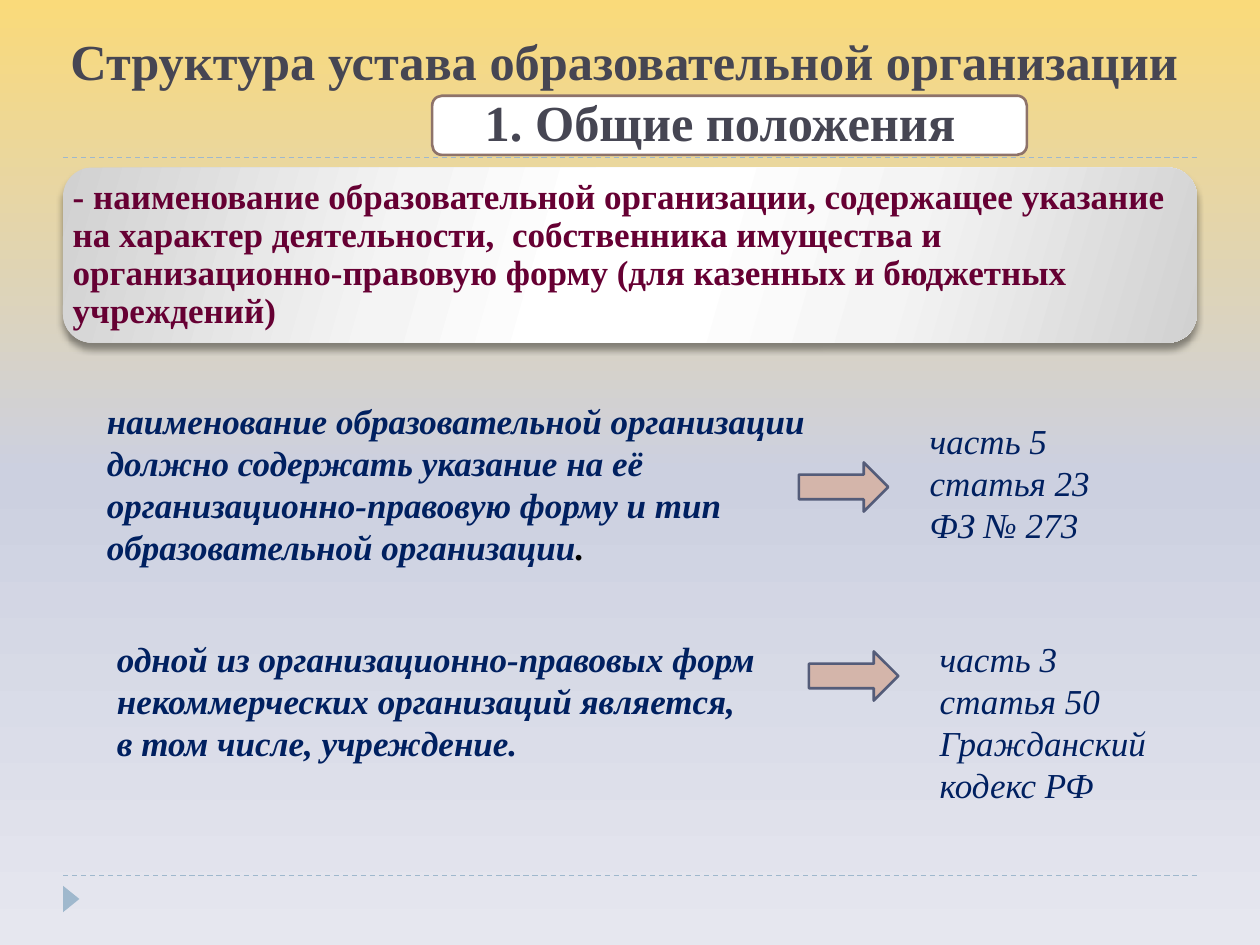
from dataclasses import dataclass

from lxml import etree
from pptx import Presentation
from pptx.dml.color import RGBColor
from pptx.enum.dml import MSO_LINE
from pptx.enum.shapes import MSO_CONNECTOR, MSO_SHAPE
from pptx.enum.text import MSO_ANCHOR, MSO_AUTO_SIZE, PP_ALIGN
from pptx.oxml.ns import qn
from pptx.util import Inches, Pt

DASH = MSO_LINE.DASH
STRAIGHT = MSO_CONNECTOR.STRAIGHT
ROUNDED = MSO_SHAPE.ROUNDED_RECTANGLE
ARROW = MSO_SHAPE.RIGHT_ARROW
TRIANGLE = MSO_SHAPE.ISOSCELES_TRIANGLE
MIDDLE, BOTTOM = MSO_ANCHOR.MIDDLE, MSO_ANCHOR.BOTTOM
LEFT, CENTER = PP_ALIGN.LEFT, PP_ALIGN.CENTER
NO_FIT = MSO_AUTO_SIZE.NONE
TITLE_ONLY = 5

WIDTH, HEIGHT = Inches(10), Inches(7.5)
COLS, ROWS = 100, 75
LEFT_COL, RIGHT_COL = 5, 95
STATEMENT_COL, ARROW_COL, REFERENCE_COL = 7.5, 63.4, 72.8


@dataclass(frozen=True)
class Theme:
    font: str = "Times New Roman"
    title_size: float = 28.8
    body_size: float = 20
    title: str = "464653"
    banner: str = "660033"
    body: str = "002060"
    black: str = "000000"
    white: str = "FFFFFF"
    rule: str = "9FB8CD"
    frame: str = "8E736A"
    arrow: str = "D4B5AA"
    arrow_line: str = "545C79"
    background: tuple = ((0, "FADA7A"), (50, "CCD0E0"), (100, "E6E7EF"))
    silver: tuple = ((0, "D1D1D1"), (30, "F4F4F4"), (45, "FFFFFF"),
                     (55, "FFFFFF"), (73, "F4F4F4"), (100, "D1D1D1"))


THEME = Theme()


def col(n):
    return round(WIDTH * n / COLS)


def row(n):
    return round(HEIGHT * n / ROWS)


def box(x, y, w, h):
    return col(x), row(y), col(w), row(h)


def child(parent, tag, **attrs):
    return etree.SubElement(parent, qn(tag), {k: str(v) for k, v in attrs.items()})


def set_gradient(fill, stops, angle):
    fill.gradient()
    fill.gradient_angle = -angle % 360
    stop_list = fill.gradient_stops[0]._gs.getparent()
    for gs in list(stop_list):
        stop_list.remove(gs)
    for position, color in stops:
        gs = child(stop_list, "a:gs", pos=position * 1000)
        child(gs, "a:srgbClr", val=color)


def add_shadow(sp, color, alpha, blur, distance):
    effects = sp._element.spPr.find(qn("a:effectLst"))
    shadow = child(effects, "a:outerShdw", blurRad=Pt(blur), dist=Pt(distance),
                   dir=90 * 60000, rotWithShape=0)
    child(child(shadow, "a:srgbClr", val=color), "a:alpha", val=alpha * 1000)


def add_text(p, text, size=THEME.body_size, color=THEME.body, bold=False,
             italic=False, align=LEFT):
    p.alignment = align
    r = p.add_run()
    r.text = text
    r.font.name = THEME.font
    r.font.size = Pt(size)
    r.font.bold = bold
    r.font.italic = italic
    r.font.color.rgb = RGBColor.from_string(color)


def next_paragraph(tf, index):
    return tf.add_paragraph() if index else tf.paragraphs[0]


def add_box(slide, kind, at, fill=None, line=None):
    sp = slide.shapes.add_shape(kind, *box(*at))
    sp.shadow.inherit = False
    if fill:
        sp.fill.solid()
        sp.fill.fore_color.rgb = RGBColor.from_string(fill)
    if line:
        sp.line.color.rgb = RGBColor.from_string(line)
        sp.line.width = Pt(1.5)
    else:
        sp.line.fill.background()
    return sp


def add_rule(slide, y):
    line = slide.shapes.add_connector(STRAIGHT, col(LEFT_COL), row(y), col(RIGHT_COL), row(y))
    line.line.color.rgb = RGBColor.from_string(THEME.rule)
    line.line.width = Pt(0.75)
    line.line.dash_style = DASH
    child(line._element.spPr, "a:effectLst")


def add_note(slide, at, paragraphs, **style):
    tf = slide.shapes.add_textbox(*box(*at)).text_frame
    tf.word_wrap = True
    for i, text in enumerate(paragraphs):
        add_text(next_paragraph(tf, i), text, italic=True, **style)
    return tf


def set_title(slide, heading, section):
    title = slide.shapes.title
    title.left, title.top, title.width, title.height = box(3.5, 1.7, 92.1, 10.8)
    tf = title.text_frame
    tf.word_wrap = True
    tf.auto_size = NO_FIT
    tf.vertical_anchor = BOTTOM
    for i, (text, indent) in enumerate(((heading, 0), (section, 15.2))):
        p = next_paragraph(tf, i)
        add_text(p, text, size=THEME.title_size, color=THEME.title, bold=True, align=CENTER)
        p.space_before = Pt(0)
        p._p.get_or_add_pPr().set("marL", str(col(indent)))
    slide.shapes._spTree.append(title._element)


def add_banner(slide, text):
    sp = add_box(slide, ROUNDED, (LEFT_COL, 13.3, RIGHT_COL - LEFT_COL, 13.9))
    set_gradient(sp.fill, THEME.silver, 16)
    add_shadow(sp, THEME.black, alpha=40, blur=4, distance=3.4)
    tf = sp.text_frame
    tf.word_wrap = True
    tf.vertical_anchor = MIDDLE
    tf.margin_left = tf.margin_right = tf.margin_top = tf.margin_bottom = Inches(0.01)
    p = tf.paragraphs[0]
    p.line_spacing = 0.9
    add_text(p, text, color=THEME.banner, bold=True)


def add_statement(slide, shift, statement, arrow_y, reference):
    (y, w, h), text = statement
    tf = add_note(slide, (STATEMENT_COL + shift, y, w, h), [text], bold=True)
    add_box(slide, ARROW, (ARROW_COL + shift, arrow_y, 7.1, 3.9), THEME.arrow, THEME.arrow_line)
    (y, w, h), lines = reference
    add_note(slide, (REFERENCE_COL + shift, y, w, h), lines)
    return tf


def main():
    prs = Presentation()
    prs.slide_width, prs.slide_height = WIDTH, HEIGHT
    slide = prs.slides.add_slide(prs.slide_layouts[TITLE_ONLY])
    set_gradient(slide.background.fill, THEME.background, 90)

    for y in (69.5, 12.5):
        add_rule(slide, y)
    add_box(slide, TRIANGLE, (4.6, 70.7, 2.1, 1.3), THEME.rule).rotation = 90

    add_box(slide, ROUNDED, (34.3, 7.6, 47.2, 4.7), THEME.white, THEME.frame)
    set_title(slide, "Структура устава образовательной организации", "1. Общие положения")
    add_banner(slide, "- наименование образовательной организации, содержащее указание на характер "
                      "деятельности,  собственника имущества и организационно-правовую форму "
                      "(для казенных и бюджетных учреждений)")

    tf = add_statement(
        slide, 0,
        ((31.2, 63.6, 14.5), "наименование образовательной организации должно содержать указание "
                             "на её организационно-правовую форму и тип образовательной организации"),
        36.7,
        ((32.8, 18.1, 11.1), ["часть 5", "статья 23", "ФЗ № 273"]))
    add_text(tf.paragraphs[0], ".", color=THEME.black, bold=True, italic=True)
    add_statement(
        slide, 0.8,
        ((50.1, 52.8, 11.1), "одной из организационно-правовых форм некоммерческих организаций "
                             "является, в том числе, учреждение."),
        51.7,
        ((50.1, 20.5, 14.5), ["часть 3 статья 50", "Гражданский кодекс РФ"]))

    prs.save("out.pptx")


if __name__ == "__main__":
    main()
